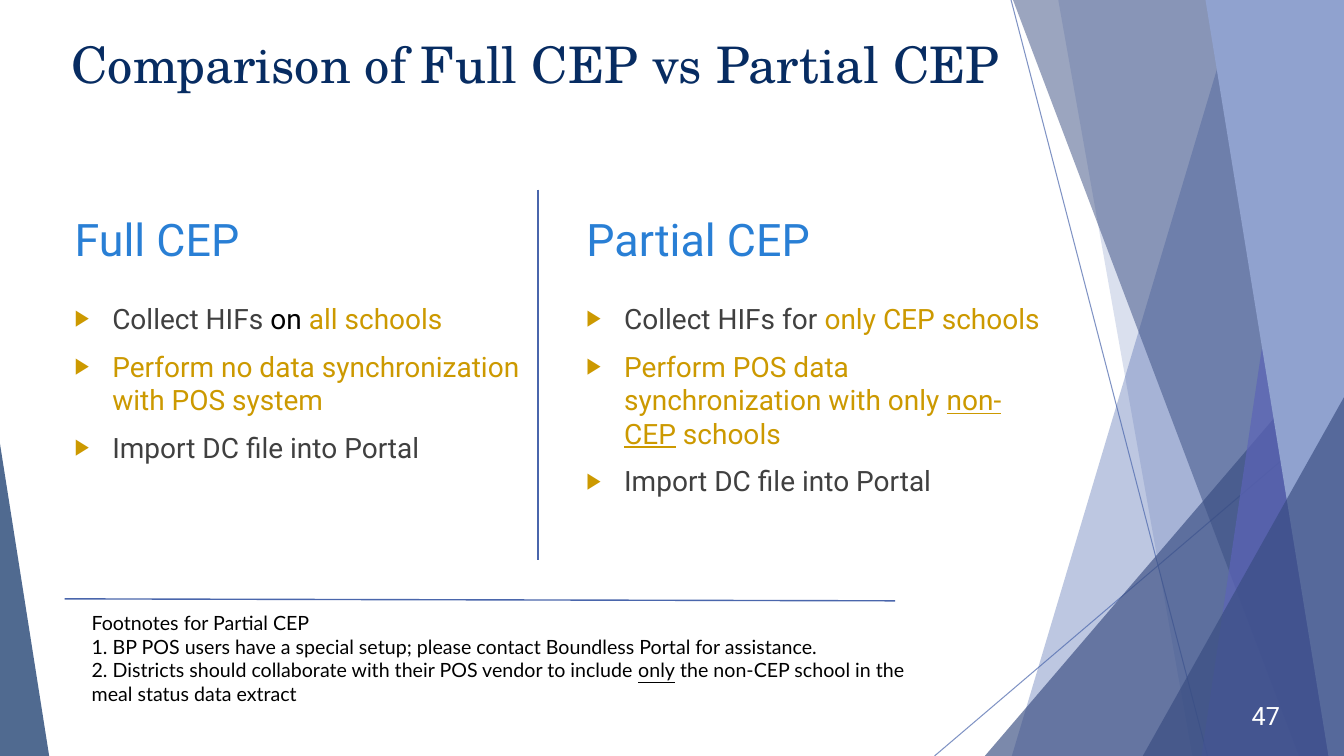
from pptx import Presentation
from pptx.dml.color import RGBColor
from pptx.enum.shapes import MSO_CONNECTOR, MSO_SHAPE
from pptx.enum.text import MSO_ANCHOR, MSO_AUTO_SIZE, PP_ALIGN
from pptx.oxml.ns import qn
from pptx.util import Cm, Pt
from lxml.etree import SubElement

WIDE, HIGH = 33.87, 19.05
NAVY, BLUE, DEEP, GOLD = "072C62", "4A66AC", "384C81", "CC9900"
GREY, BLACK, WHITE, SKY = "404040", "000000", "FFFFFF", "297FD5"

TITLE = "Comparison of Full CEP vs Partial CEP"
# Each run is text, colour, and optionally True for underlined
COLUMNS = [
    ("Full CEP", [
        [("Collect HIFs ", GREY), ("on", BLACK), (" all schools", GOLD)],
        [("Perform no data synchronization with POS system", GOLD)],
        [("Import DC file into Portal", GREY)],
    ]),
    ("Partial CEP", [
        [("Collect HIFs for ", GREY), ("only CEP schools", GOLD)],
        [("Perform POS data synchronization with only ", GOLD),
         ("non-CEP", GOLD, True), (" schools", GOLD)],
        [("Import DC file into Portal", GREY)],
    ]),
]
NOTES = [
    [("Footnotes for Partial CEP", BLACK)],
    [("1. BP POS users have a special setup; please contact "
      "Boundless Portal for assistance.", BLACK)],
    [("2. Districts should collaborate with their POS vendor to include ", BLACK),
     ("only", BLACK, True),
     (" the non-CEP school in the meal status data extract", BLACK)],
]
# Bands reach the right edge: top x, bottom x, colour, opacity
# Peaks stand on the bottom edge: left, top, width, apex, colour, opacity
FACETS = [
    ("band", 31.19, 25.5, BLUE, 36),
    ("band", 26.67, 30.05, BLUE, 20),
    ("peak", 24.82, 8.48, 9.05, 1, DEEP, 66),
    ("band", 25.53, 32.74, DEEP, 50),
    ("band", 33.1, 30.28, "5C64B7", 70),
    ("band", 30.38, 33.48, "90A2CF", 100),
    ("peak", 28.8, 10.01, 5.07, 1, DEEP, 66),
    ("peak", 0, 11.18, 1.24, 0, NAVY, 70),
]
# Start x and y, end x and y, weight, opacity
RAYS = [(25.48, 0, 30.43, HIGH, 0.75, 70), (WIDE, 10.26, 23.55, HIGH, 0.75, 70)]
RULES = [(13.56, 4.78, 13.56, 14.1, 2, 100), (1.63, 15.09, 22.56, 15.14, 1, 100)]


def rgb(code):
    return RGBColor.from_string(code)


def fade(shape, alpha):
    """Set the opacity, in percent, of the colours of a shape."""
    if alpha < 100:
        for tint in shape._element.spPr.iter(qn("a:srgbClr")):
            SubElement(tint, qn("a:alpha"), val=str(alpha * 1000))


def paint(shape, code, alpha):
    shape.shadow.inherit = False
    shape.fill.solid()
    shape.fill.fore_color.rgb = rgb(code)
    shape.line.fill.background()
    fade(shape, alpha)


def band(top, low, code, alpha):
    pen = shapes.build_freeform(Cm(top), 0)
    edge = [(WIDE, 0), (WIDE, HIGH), (low, HIGH)]
    pen.add_line_segments([(Cm(x), Cm(y)) for x, y in edge])
    paint(pen.convert_to_shape(), code, alpha)


def peak(left, top, wide, apex, code, alpha):
    shape = shapes.add_shape(MSO_SHAPE.ISOSCELES_TRIANGLE, Cm(left), Cm(top),
                             Cm(wide), Cm(HIGH - top))
    shape.adjustments[0] = apex
    paint(shape, code, alpha)


def stroke(x1, y1, x2, y2, weight, alpha):
    line = shapes.add_connector(MSO_CONNECTOR.STRAIGHT,
                                Cm(x1), Cm(y1), Cm(x2), Cm(y2))
    line.line.color.rgb = rgb(BLUE)
    line.line.width = Pt(weight)
    fade(line, alpha)
    SubElement(line._element.spPr, qn("a:effectLst"))


def bullet(para):
    props = para._p.get_or_add_pPr()
    props.set("marL", str(Cm(0.95)))
    props.set("indent", str(-Cm(0.95)))
    tint = SubElement(props, qn("a:buClr"))
    SubElement(tint, qn("a:srgbClr"), val=GOLD)
    SubElement(props, qn("a:buSzPct"), val="80000")
    SubElement(props, qn("a:buFont"), typeface="Arial")
    SubElement(props, qn("a:buChar"), char="▶")


def write(shape, box, paras, face, size, anchor=MSO_ANCHOR.TOP,
          align=PP_ALIGN.LEFT, fit=MSO_AUTO_SIZE.NONE, listed=False):
    """Place a text shape and fill it with paragraphs of runs."""
    for name, value in zip(("left", "top", "width", "height"), box):
        setattr(shape, name, Cm(value))
    frame = shape.text_frame
    look = {"word_wrap": True, "auto_size": fit, "vertical_anchor": anchor}
    for name, value in look.items():
        setattr(frame, name, value)
    for i, runs in enumerate(paras):
        para = frame.add_paragraph() if i else frame.paragraphs[0]
        para.alignment = align
        if listed:
            if i:
                para.space_before = Pt(10)
            bullet(para)
        for text, code, *under in runs:
            run = para.add_run()
            run.text = text
            style = {"name": face, "size": Pt(size), "underline": bool(under)}
            for name, value in style.items():
                setattr(run.font, name, value)
            run.font.color.rgb = rgb(code)


def label(box, *args, **kind):
    write(shapes.add_textbox(0, 0, 0, 0), box, *args, **kind)


deck = Presentation()
deck.slide_width, deck.slide_height = Cm(WIDE), Cm(HIGH)
slide = deck.slides.add_slide(deck.slide_layouts[5])
shapes = slide.shapes

for ray in RAYS:
    stroke(*ray)
for kind, *facet in FACETS:
    (band if kind == "band" else peak)(*facet)

write(shapes.title, (1.55, 0.71, 24.97, 3.66), [[(TITLE, NAVY)]],
      "TeX Gyre Schola", 36)
for i, (head, points) in enumerate(COLUMNS):
    left = 1.63 + 12.9 * i
    label((left, 5.21, 11.94, 1.6), [[(head, SKY)]], "Roboto", 32,
          anchor=MSO_ANCHOR.BOTTOM)
    label((left, 7.47, 11.94, 10.57), points, "Roboto", 20, listed=True)
label((2.06, 15.27, 21.72, 2.64), NOTES, "Lato", 14,
      fit=MSO_AUTO_SIZE.SHAPE_TO_FIT_TEXT)
label((30.61, 17.53, 1.9, 1.02), [[("47", WHITE)]], "Roboto", 18,
      anchor=MSO_ANCHOR.MIDDLE, align=PP_ALIGN.RIGHT)
for rule in RULES:
    stroke(*rule)

deck.save("out.pptx")
